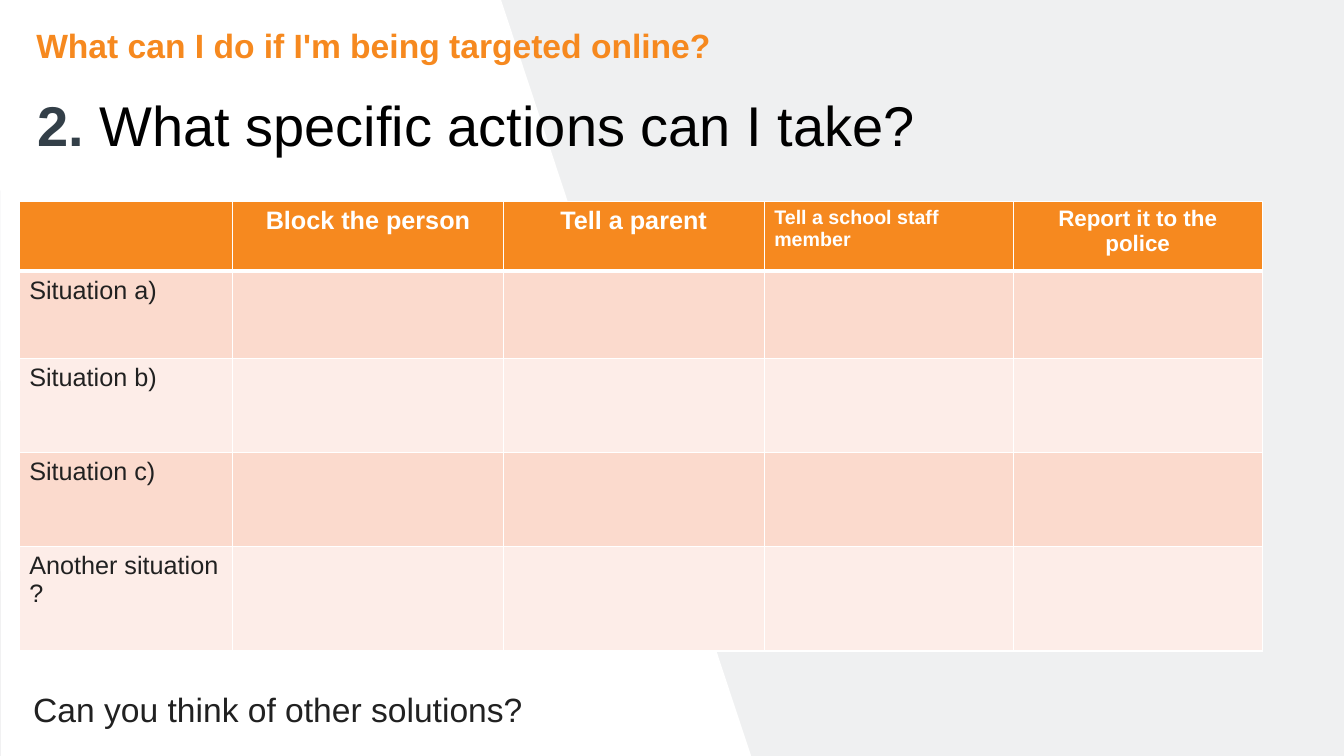
from dataclasses import dataclass

from lxml import etree
from pptx import Presentation
from pptx.dml.color import RGBColor
from pptx.enum import text as t
from pptx.oxml import ns
from pptx.util import Inches, Pt

ORANGE, SLATE, INK, WHITE = "F6891F", "333F48", "212121", "FFFFFF"
BACKGROUND = "EFF0F1"
BANDS = ("FBDACD", "FDEDE8")


@dataclass
class Run:
    text: str
    size: float
    color: str
    bold: bool = False


@dataclass
class Heading:
    text: str
    size: float = 18
    align: t.PP_ALIGN = t.PP_ALIGN.CENTER


HEADINGS = [
    Heading(""),
    Heading("Block the person"),
    Heading("Tell a parent"),
    Heading("Tell a school staff member", 14, t.PP_ALIGN.LEFT),
    Heading("Report it to the police", 16),
]
SITUATIONS = ["Situation a)", "Situation b)", "Situation c)", "Another situation ?"]
COLUMN_WIDTHS = [2.12, 2.68, 2.59, 2.47, 2.47]
ROW_HEIGHTS = [0.69, 0.87, 0.93, 0.93, 1.04]


def rgb(color: str) -> RGBColor:
    return RGBColor.from_string(color)


def add_runs(p, *runs: Run) -> None:
    for run in runs:
        r = p.add_run()
        r.text = run.text
        r.font.name = "Arial"
        r.font.size = Pt(run.size)
        r.font.bold = run.bold
        r.font.color.rgb = rgb(run.color)


def set_frame(tf, anchor: t.MSO_ANCHOR) -> None:
    """Remove the insets and fix the wrapping and anchor of a text frame."""
    tf.margin_left = tf.margin_top = tf.margin_right = tf.margin_bottom = 0
    tf.auto_size = t.MSO_AUTO_SIZE.NONE
    tf.word_wrap = True
    tf.vertical_anchor = anchor


def add_panel(s) -> None:
    """Draw the slanted white area on the left."""
    builder = s.shapes.build_freeform(0, 0)
    corners = [(4.97, 0), (7.45, 7.5), (0.01, 7.5)]
    builder.add_line_segments([(Inches(x), Inches(y)) for x, y in corners])
    panel = builder.convert_to_shape()
    panel.shadow.inherit = False
    panel.fill.solid()
    panel.fill.fore_color.rgb = rgb(WHITE)
    panel.line.fill.background()


def set_borders(cell, top: float, bottom: float) -> None:
    tc_pr = cell._tc.get_or_add_tcPr()
    for side, width in (("L", 1), ("R", 1), ("T", top), ("B", bottom)):
        line = etree.SubElement(tc_pr, ns.qn(f"a:ln{side}"), w=str(Pt(width)))
        fill = etree.SubElement(line, ns.qn("a:solidFill"))
        etree.SubElement(fill, ns.qn("a:srgbClr"), val=WHITE)


def add_actions_table(s) -> None:
    frame = s.shapes.add_table(
        len(ROW_HEIGHTS), len(COLUMN_WIDTHS), Inches(0.19), Inches(2),
        Inches(sum(COLUMN_WIDTHS)), Inches(sum(ROW_HEIGHTS)))
    table = frame.table
    for column, width in zip(table.columns, COLUMN_WIDTHS):
        column.width = Inches(width)
    for i, (row, height) in enumerate(zip(table.rows, ROW_HEIGHTS)):
        row.height = Inches(height)
        for cell in row.cells:
            set_borders(cell, 3 if i == 1 else 1, 3 if i == 0 else 1)
            cell.fill.solid()
            cell.fill.fore_color.rgb = rgb(BANDS[(i - 1) % 2] if i else ORANGE)
    for cell, heading in zip(table.rows[0].cells, HEADINGS):
        if heading.text:
            p = cell.text_frame.paragraphs[0]
            p.alignment = heading.align
            add_runs(p, Run(heading.text, heading.size, WHITE, True))
    for i, situation in enumerate(SITUATIONS, 1):
        p = table.cell(i, 0).text_frame.paragraphs[0]
        add_runs(p, Run(situation, 18, INK))


def main() -> None:
    prs = Presentation()
    prs.slide_width, prs.slide_height = Inches(13.33), Inches(7.5)
    s = prs.slides.add_slide(prs.slide_layouts[5])
    s.background.fill.solid()
    s.background.fill.fore_color.rgb = rgb(BACKGROUND)
    add_panel(s)

    title = s.shapes.title
    title.left, title.top = Inches(0.37), Inches(0.97)
    title.width, title.height = Inches(9.02), Inches(0.94)
    s.shapes._spTree.append(title._element)  # bring in front of the panel
    set_frame(title.text_frame, t.MSO_ANCHOR.TOP)
    p = title.text_frame.paragraphs[0]
    p.alignment = t.PP_ALIGN.LEFT
    p.line_spacing = 0.9
    add_runs(p, Run("2. ", 40, SLATE, True),
             Run("What specific actions can I take?", 40, "000000"))

    topic = s.shapes.add_textbox(Inches(0.36), Inches(0.21), Inches(6.89), Inches(0.44))
    set_frame(topic.text_frame, t.MSO_ANCHOR.BOTTOM)
    add_runs(topic.text_frame.paragraphs[0],
             Run("What can I do if I'm being targeted online?", 24, ORANGE, True))

    add_actions_table(s)

    question = s.shapes.add_textbox(Inches(0.23), Inches(6.79), Inches(5.11), Inches(0.5))
    question.text_frame.word_wrap = False
    question.text_frame.auto_size = t.MSO_AUTO_SIZE.SHAPE_TO_FIT_TEXT
    add_runs(question.text_frame.paragraphs[0],
             Run("Can you think of other solutions?", 24, INK))

    prs.save("out.pptx")


if __name__ == "__main__":
    main()
